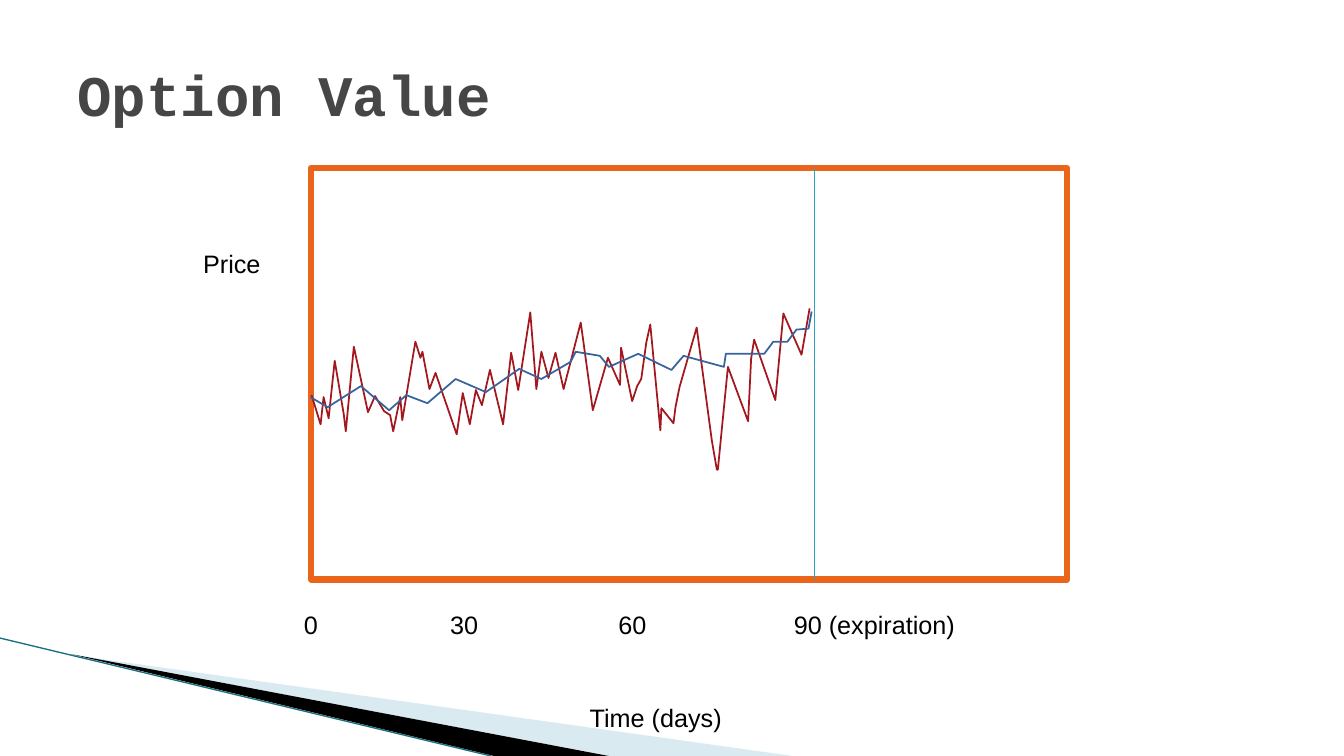
from lxml import etree
from pptx import Presentation, util as u
from pptx.dml.color import RGBColor
from pptx.enum import shapes, text
from pptx.oxml.ns import qn

CELL = u.Inches(1) / 12
COLORS = {
    "white": "FFFFFF", "black": "000000", "title": "464646", "frame": "EB641B",
    "option": "A3171E", "stock": "39639D", "expiration": "2DA2BF",
    "pale": "A0CBDC", "edge": "1B6F80",
}
PALE_WEDGE = [(0.73, 6.5), (7.86, 7.5), (6.05, 7.5)]
BLACK_WEDGE = [(0.71, 6.49), (6.04, 7.5), (4.9, 7.5)]
EDGE = [(0, 6.33), (4.87, 7.5)]
OPTION_TRACE = [
    (3.09, 3.92), (3.18, 4.21), (3.21, 3.94), (3.26, 4.15), (3.32, 3.58),
    (3.41, 4.11), (3.43, 4.28), (3.51, 3.44), (3.65, 4.09), (3.72, 3.93),
    (3.81, 4.08), (3.87, 4.12), (3.9, 4.28), (3.97, 3.94), (3.99, 4.17),
    (4.1, 3.51), (4.12, 3.39), (4.17, 3.55), (4.19, 3.49), (4.26, 3.86),
    (4.32, 3.7), (4.53, 4.31), (4.59, 3.9), (4.66, 4.21), (4.72, 3.87),
    (4.78, 4.02), (4.86, 3.67), (4.99, 4.21), (5.07, 3.5), (5.14, 3.87),
    (5.26, 3.1), (5.32, 3.86), (5.37, 3.49), (5.44, 3.75), (5.51, 3.5),
    (5.59, 3.86), (5.76, 3.2), (5.88, 4.07), (6.03, 3.55), (6.15, 3.82),
    (6.16, 3.45), (6.27, 3.98), (6.32, 3.83), (6.36, 3.76), (6.41, 3.4),
    (6.45, 3.22), (6.55, 4.27), (6.56, 4.05), (6.68, 4.2), (6.7, 4.04),
    (6.74, 3.84), (6.91, 3.25), (7.06, 4.37), (7.11, 4.66), (7.12, 4.66),
    (7.22, 3.64), (7.42, 4.18), (7.45, 3.56), (7.48, 3.37), (7.69, 3.97),
    (7.77, 3.11), (7.95, 3.52), (8.03, 3.06),
]
STOCK_TRACE = [
    (3.08, 3.94), (3.25, 4.04), (3.58, 3.83), (3.86, 4.07), (4.03, 3.92),
    (4.24, 4), (4.52, 3.76), (4.82, 3.89), (5.15, 3.66), (5.37, 3.76),
    (5.66, 3.59), (5.71, 3.49), (5.95, 3.53), (6.04, 3.64), (6.33, 3.51),
    (6.66, 3.67), (6.78, 3.53), (7.18, 3.64), (7.2, 3.51), (7.58, 3.51),
    (7.67, 3.39), (7.81, 3.39), (7.9, 3.27), (8.02, 3.26), (8.05, 3.09),
]
LABELS = [
    ("Price", 23, 29, 13), ("0", 35, 72, 6), ("30", 52.4, 72, 8),
    ("60", 72.4, 72, 8), ("90 (expiration)", 93.3, 72, 24),
    ("Time (days)", 69, 83, 20),
]


def grid(*cells):
    return [round(cell * CELL) for cell in cells]


def color(name):
    return RGBColor.from_string(COLORS[name])


def style_line(line, name, width):
    line.color.rgb = color(name)
    line.width = u.Pt(width)


def format_text(shape, name, font, size, bold=False):
    for run in shape.text_frame.paragraphs[0].runs:
        run.font.name = font
        run.font.size = u.Pt(size)
        run.font.bold = bold
        run.font.color.rgb = color(name)


def add_outline(slide, points, close):
    start, *rest = [(u.Inches(x), u.Inches(y)) for x, y in points]
    builder = slide.shapes.build_freeform(*start, scale=1)
    builder.add_line_segments(rest, close=close)
    shape = builder.convert_to_shape()
    shape.shadow.inherit = False
    return shape


def add_wedge(slide, points, name, opacity=100):
    wedge = add_outline(slide, points, True)
    wedge.fill.solid()
    wedge.fill.fore_color.rgb = color(name)
    wedge.line.fill.background()
    if opacity < 100:
        fill = wedge.fill._xPr.find(qn("a:solidFill"))
        etree.SubElement(fill[0], qn("a:alpha"), val=str(opacity * 1000))


def add_trace(slide, points, name):
    trace = add_outline(slide, points, False)
    trace.fill.background()
    style_line(trace.line, name, 1.25)


def add_line(slide, ends, name, width):
    connector = slide.shapes.add_connector(shapes.MSO_CONNECTOR.STRAIGHT, *ends)
    style_line(connector.line, name, width)
    etree.SubElement(connector._element.spPr, qn("a:effectLst"))


def add_frame(slide):
    frame = slide.shapes.add_shape(shapes.MSO_SHAPE.RECTANGLE, *grid(37, 20, 90, 49))
    frame.shadow.inherit = False
    frame.fill.solid()
    frame.fill.fore_color.rgb = color("white")
    style_line(frame.line, "frame", 4.33)
    line_properties = frame.line._get_or_add_ln()
    etree.SubElement(line_properties, qn("a:round"))


def add_label(slide, wording, left, top, width):
    label = slide.shapes.add_textbox(*grid(left, top, width, 4.8))
    label.text_frame.word_wrap = True
    label.text_frame.text = wording
    format_text(label, "black", "Arial", 18)


def set_title(slide, wording):
    title = slide.shapes.title
    title.left, title.top, title.width, title.height = grid(8, 3.6, 144, 15)
    title.text_frame.text = wording
    title.text_frame.vertical_anchor = text.MSO_ANCHOR.MIDDLE
    title.text_frame.paragraphs[0].alignment = text.PP_ALIGN.LEFT
    format_text(title, "title", "Courier New", 41, bold=True)


def main():
    presentation = Presentation()
    presentation.slide_width = u.Inches(13.33)
    presentation.slide_height = u.Inches(7.5)
    slide = presentation.slides.add_slide(presentation.slide_layouts[5])
    add_wedge(slide, PALE_WEDGE, "pale", 40)
    add_wedge(slide, BLACK_WEDGE, "black")
    add_line(slide, [u.Inches(value) for point in EDGE for value in point], "edge", 0.95)
    set_title(slide, "Option Value")
    add_frame(slide)
    for label in LABELS:
        add_label(slide, *label)
    add_trace(slide, OPTION_TRACE, "option")
    add_line(slide, grid(97, 20, 97, 69), "expiration", 0.75)
    add_trace(slide, STOCK_TRACE, "stock")
    presentation.save("out.pptx")


if __name__ == "__main__":
    main()
